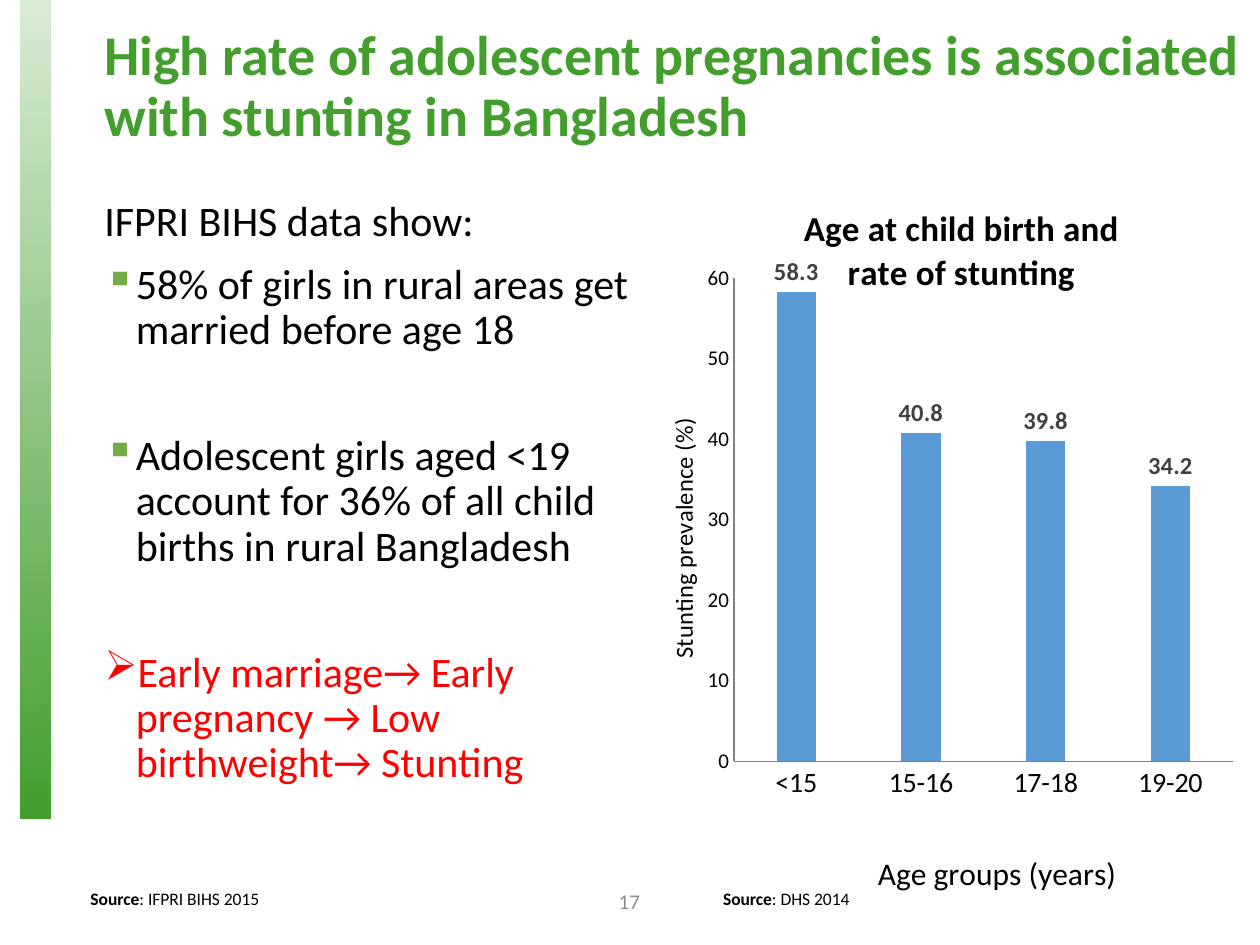
from lxml import etree
from pptx import Presentation
from pptx import util as u
from pptx.chart.data import CategoryChartData
from pptx.dml.color import RGBColor
from pptx.enum import chart as kinds
from pptx.enum import shapes, text
from pptx.oxml.ns import qn

COLORS = {"green": "439E2E", "bullet": "70AD47", "red": "FF0000", "black": "000000",
          "grey": "8C8C8C", "axis": "808080", "bar": "5B9BD5", "label": "404040"}
FONT = "Calibri"


def color(name):
    """Return the named colour."""
    return RGBColor.from_string(COLORS[name])


def style_font(font, size, shade="black", bold=False):
    """Apply the deck typeface with a size, colour and weight."""
    for name, value in {"name": FONT, "size": u.Pt(size), "bold": bold}.items():
        setattr(font, name, value)
    font.color.rgb = color(shade)


def add_span(para, words, size, shade="black", bold=False):
    """Append a formatted run to a paragraph."""
    span = para.add_run()
    span.text = words
    style_font(span.font, size, shade, bold)


def add_box(page, left, top, width, height, anchor=text.MSO_ANCHOR.TOP):
    """Add a wrapping text box and return its text frame."""
    box = page.shapes.add_textbox(*map(u.Inches, (left, top, width, height)))
    frame = box.text_frame
    frame.word_wrap = True
    frame.vertical_anchor = anchor
    return frame


def add_bullet(para, mark, shade):
    """Give a paragraph a coloured bullet with a hanging indent."""
    props = para._p.get_or_add_pPr()
    props.set("marL", str(u.Inches(0.25)))
    props.set("indent", str(-u.Inches(0.25)))
    tint = etree.SubElement(props, qn("a:buClr"))
    etree.SubElement(tint, qn("a:srgbClr"), val=COLORS[shade])
    etree.SubElement(props, qn("a:buChar"), char=mark)


def add_side_bar(page):
    """Add the green strip that fades towards the top."""
    bar = page.shapes.add_shape(shapes.MSO_SHAPE.RECTANGLE,
                                *map(u.Inches, (0.16, 0, 0.24, 6.5)))
    bar.shadow.inherit = False
    bar.line.fill.background()
    bar.fill.gradient()
    bar.fill.gradient_angle = 270
    for stop in bar.fill.gradient_stops:
        stop.color.rgb = color("green")
    top_color = bar._element.spPr.find(".//" + qn("a:srgbClr"))
    etree.SubElement(top_color, qn("a:alpha"), val="20000")


def add_title(page):
    """Add the slide heading."""
    para = add_box(page, 0.73, 0.14, 9.42, 1.11, text.MSO_ANCHOR.MIDDLE).paragraphs[0]
    para.line_spacing = 0.9
    add_span(para, "High rate of adolescent pregnancies is associated with stunting "
             "in Bangladesh", 32, "green", True)


def add_findings(page):
    """Add the introduction and the bulleted findings."""
    frame = add_box(page, 0.73, 1.54, 4.47, 5.05)
    findings = [
        ("IFPRI BIHS data show:", None, None, "black", 0),
        ("58% of girls in rural areas get married before age 18",
         "▪", "bullet", "black", 10),
        ("Adolescent girls aged <19 account for 36% of all child births in rural Bangladesh",
         "▪", "bullet", "black", 46),
        ("Early marriage→ Early pregnancy → Low birthweight→ Stunting",
         "➢", "red", "red", 46),
    ]
    for index, (words, mark, mark_shade, shade, before) in enumerate(findings):
        para = frame.add_paragraph() if index else frame.paragraphs[0]
        if mark:
            add_bullet(para, mark, mark_shade)
        para.line_spacing = 0.9
        para.space_before = u.Pt(before)
        add_span(para, words, 24, shade)


def add_source(page, left, width, words):
    """Add a source line with a bold lead word."""
    para = add_box(page, left, 7, width, 0.27).paragraphs[0]
    add_span(para, "Source", 10, bold=True)
    add_span(para, ": " + words, 10)


def add_page_number(page):
    """Add the centred page number."""
    para = add_box(page, 3.87, 6.95, 2.25, 0.4, text.MSO_ANCHOR.MIDDLE).paragraphs[0]
    para.alignment = text.PP_ALIGN.CENTER
    add_span(para, "17", 12, "grey")


def set_layout(parent, index, **values):
    """Place a chart part by fractions of the chart area."""
    for old in parent.findall(qn("c:layout")):
        parent.remove(old)
    layout = etree.Element(qn("c:layout"))
    manual = etree.SubElement(layout, qn("c:manualLayout"))
    if "w" in values:
        etree.SubElement(manual, qn("c:layoutTarget"), val="inner")
    for side in "xy":
        etree.SubElement(manual, qn(f"c:{side}Mode"), val="edge")
    for name, value in values.items():
        etree.SubElement(manual, qn("c:" + name), val=str(value))
    parent.insert(index, layout)


def set_chart_title(title, lines, size, x, y, bold=False):
    """Write and place a chart or axis title."""
    frame = title.text_frame
    for index, words in enumerate(lines):
        para = frame.add_paragraph() if index else frame.paragraphs[0]
        add_span(para, words, size, bold=bold)
    set_layout(title._element, 1, x=x, y=y)


def style_axis(axis, size):
    """Format an axis without gridlines or tick marks."""
    marks = {"has_major_gridlines": False, "major_tick_mark": kinds.XL_TICK_MARK.NONE,
             "minor_tick_mark": kinds.XL_TICK_MARK.NONE}
    for name, value in marks.items():
        setattr(axis, name, value)
    style_font(axis.tick_labels.font, size)
    axis.format.line.color.rgb = color("axis")
    axis.format.line.width = u.Pt(0.75)


def add_stunting_chart(page):
    """Add the column chart of stunting by age at child birth."""
    data = CategoryChartData(number_format="#,##0.0")
    data.categories = ["<15", "15-16", "17-18", "19-20"]
    data.add_series("Series 1", [58.3, 40.8, 39.8, 34.2])
    chart = page.shapes.add_chart(kinds.XL_CHART_TYPE.COLUMN_CLUSTERED,
                                  *map(u.Inches, (5.11, 1.54, 4.77, 5.81)), data).chart
    style_font(chart.font, 10)
    chart.has_legend = False
    set_chart_title(chart.chart_title, ["Age at child birth and", "rate of stunting"],
                    20, 0.26, 0.01, True)
    style_axis(chart.category_axis, 16)
    set_chart_title(chart.category_axis.axis_title, ["Age groups (years)"], 18, 0.38, 0.89)
    style_axis(chart.value_axis, 12)
    set_chart_title(chart.value_axis.axis_title, ["Stunting prevalence (%)"], 14, 0.03, 0.3)
    for name, value in {"minimum_scale": 0, "maximum_scale": 60, "major_unit": 10}.items():
        setattr(chart.value_axis, name, value)
    chart.value_axis.tick_labels.number_format = "0"
    chart.value_axis.tick_labels.number_format_is_linked = False

    plot = chart.plots[0]
    for name, value in {"gap_width": 219, "overlap": -27, "vary_by_categories": False}.items():
        setattr(plot, name, value)
    series = plot.series[0]
    series.format.fill.solid()
    series.format.fill.fore_color.rgb = color("bar")
    labels = series.data_labels
    for name, value in {"show_value": True, "number_format": "#,##0.0",
                        "number_format_is_linked": False,
                        "position": kinds.XL_LABEL_POSITION.OUTSIDE_END}.items():
        setattr(labels, name, value)
    style_font(labels.font, 14, "label", True)
    plot_area = chart.element.find(".//" + qn("c:plotArea"))
    set_layout(plot_area, 0, x=0.15, y=0.115, w=0.83, h=0.66)


def main():
    """Build and save the slide."""
    deck = Presentation()
    deck.slide_width, deck.slide_height = u.Inches(10), u.Inches(7.5)
    page = deck.slides.add_slide(deck.slide_layouts[6])
    add_side_bar(page)
    add_page_number(page)
    add_findings(page)
    add_title(page)
    add_stunting_chart(page)
    add_source(page, 0.62, 5.36, "IFPRI BIHS 2015")
    add_source(page, 5.64, 1.53, "DHS 2014")
    deck.save("out.pptx")


if __name__ == "__main__":
    main()
